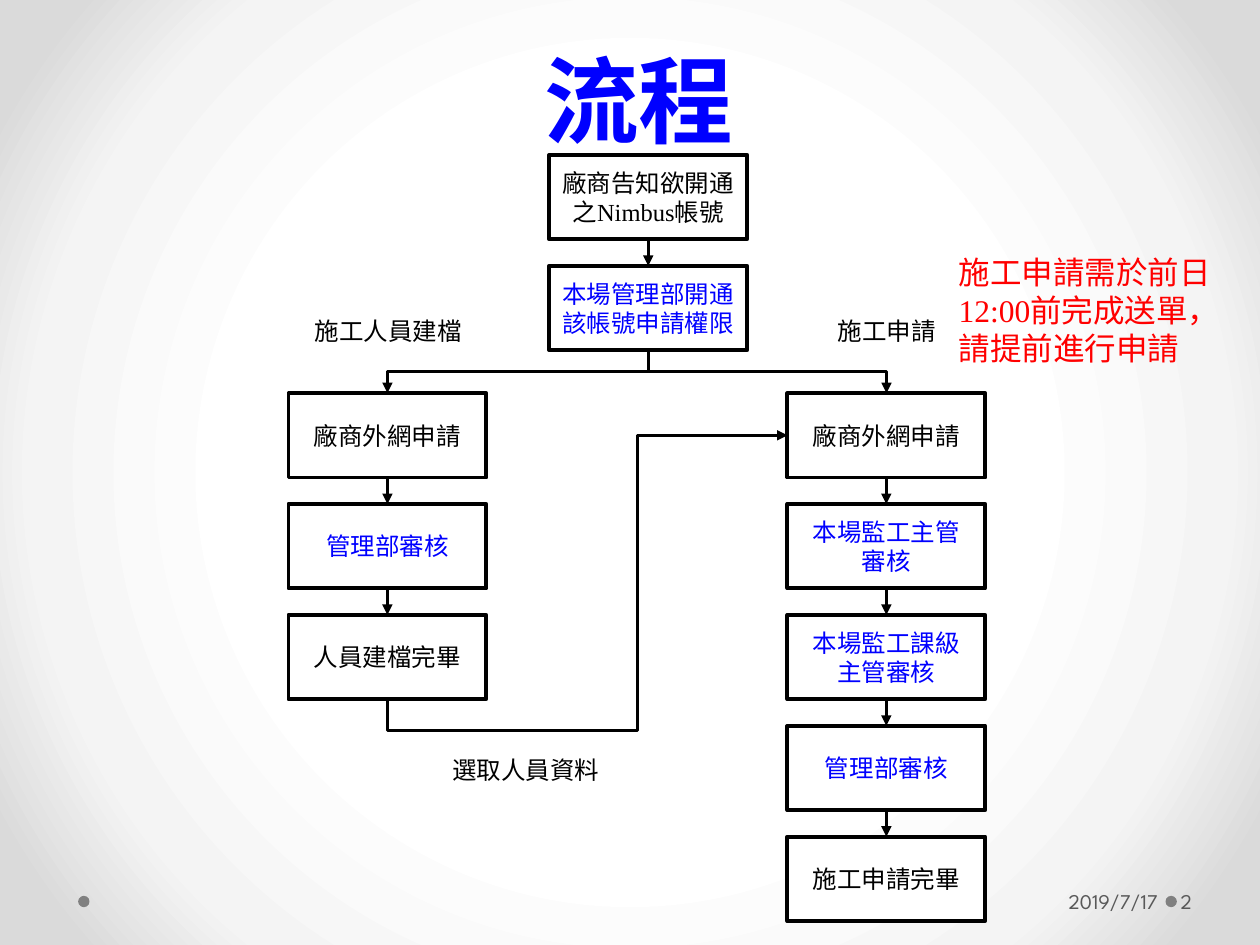
import pptx
import pptx.util
import pptx.oxml
import pptx.oxml.ns
from lxml import etree
from pptx.dml.color import RGBColor
from pptx.enum.shapes import MSO_CONNECTOR, MSO_SHAPE
from pptx.enum.text import MSO_ANCHOR, PP_ALIGN

Inches, Pt, qn = pptx.util.Inches, pptx.util.Pt, pptx.oxml.ns.qn

BLACK = RGBColor(0x00, 0x00, 0x00)
WHITE = RGBColor(0xFF, 0xFF, 0xFF)
BLUE = RGBColor(0x00, 0x00, 0xFF)
RED = RGBColor(0xFF, 0x00, 0x00)
GRAY = RGBColor(0x80, 0x80, 0x80)
DARK_GRAY = RGBColor(0x59, 0x59, 0x59)
SERIF, SANS, FOOTER = "Times New Roman", "Noto Sans CJK SC", "League Spartan"

# Content: each column is (left, top of first box, steps)
BOX_WIDTH, BOX_HEIGHT, ROW_PITCH = 1.57, 0.67, 0.88
COLUMNS = {
    "account": (4.36, 1.23, [("廠商告知欲開通之Nimbus帳號", BLACK),
                             ("本場管理部開通該帳號申請權限", BLUE)]),
    "staff": (2.29, 3.12, [("廠商外網申請", BLACK),
                           ("管理部審核", BLUE),
                           ("人員建檔完畢", BLACK)]),
    "work": (6.25, 3.12, [("廠商外網申請", BLACK),
                          ("本場監工主管\n審核", BLUE),
                          ("本場監工課級\n主管審核", BLUE),
                          ("管理部審核", BLUE),
                          ("施工申請完畢", BLACK)]),
}
LABELS = [("施工人員建檔", 2.4, 2.46, 1.38),
          ("施工申請", 6.55, 2.46, 0.99),
          ("選取人員資料", 3.49, 5.94, 1.38)]
NOTE = "施工申請需於前日12:00前完成送單，\n請提前進行申請"
GRADIENT = [(50, "FFFFFF"), (76, "F4F4F4"), (92, "DADADA")]

presentation = pptx.Presentation()
presentation.slide_width, presentation.slide_height = Inches(10), Inches(7.5)
slide = presentation.slides.add_slide(presentation.slide_layouts[6])


def write(shape, text, size, font, color, align=PP_ALIGN.LEFT,
          anchor=MSO_ANCHOR.TOP, bold=False, wrap=True):
    frame = shape.text_frame
    frame.text = text
    frame.word_wrap = wrap
    frame.vertical_anchor = anchor
    for paragraph in frame.paragraphs:
        paragraph.alignment = align
        paragraph.font.size = Pt(size)
        paragraph.font.name = font
        paragraph.font.bold = bold
        paragraph.font.color.rgb = color
        latin = paragraph.font._element.find(qn("a:latin"))
        east_asian = etree.Element(qn("a:ea"), typeface=SANS)
        latin.addnext(east_asian)
    return frame


def add_text(text, left, top, width, height, *style, **options):
    box = slide.shapes.add_textbox(*map(Inches, (left, top, width, height)))
    return write(box, text, *style, **options)


def add_box(kind, left, top, width, height, fill):
    shape = slide.shapes.add_shape(kind, *map(Inches, (left, top, width, height)))
    shape.shadow.inherit = False
    shape.fill.solid()
    shape.fill.fore_color.rgb = fill
    shape.line.fill.background()
    return shape


def add_arrow(kind, start, end):
    arrow = slide.shapes.add_connector(kind, *map(Inches, (*start, *end)))
    arrow.line.color.rgb = BLACK
    arrow.line.width = Pt(1.5)
    etree.SubElement(arrow.line._get_or_add_ln(), qn("a:tailEnd"), type="triangle")
    etree.SubElement(arrow._element.spPr, qn("a:effectLst"))
    return arrow


def add_elbow(start, end, bends=(50000,)):
    """Elbow that leaves vertically: a turned connector around the midpoint."""
    arrow = add_arrow(MSO_CONNECTOR.ELBOW, start, end)
    (x1, y1), (x2, y2) = start, end
    length, spread = abs(y2 - y1), abs(x2 - x1)
    arrow.left = Inches((x1 + x2 - length) / 2)
    arrow.top = Inches((y1 + y2 - spread) / 2)
    arrow.width, arrow.height = Inches(length), Inches(spread)
    right, up = x2 > x1, y2 < y1
    frame = arrow._element.spPr.find(qn("a:xfrm"))
    frame.set("rot", str((270 if right and not up else 90) * 60000))
    frame.set("flipH", str(int(right)))
    frame.set("flipV", str(int(right and up)))
    geometry = arrow._element.spPr.find(qn("a:prstGeom"))
    geometry.set("prst", f"bentConnector{len(bends) + 2}")
    guides = geometry.find(qn("a:avLst"))
    for number, bend in enumerate(bends, 1):
        etree.SubElement(guides, qn("a:gd"), name=f"adj{number}", fmla=f"val {bend}")


# Radial background
slide.background.fill.solid()
solid = slide.background._cSld.bg.bgPr.find(qn("a:solidFill"))
stops = "".join(f'<a:gs pos="{position * 1000}"><a:srgbClr val="{color}"/></a:gs>'
                for position, color in GRADIENT)
solid.getparent().replace(solid, pptx.oxml.parse_xml(
    f'<a:gradFill {pptx.oxml.ns.nsdecls("a")} rotWithShape="1"><a:gsLst>{stops}</a:gsLst>'
    '<a:path path="circle"><a:fillToRect l="50000" t="50000" r="50000" b="50000"/></a:path>'
    '</a:gradFill>'))

# Title and footer
title = add_text("流程", 0.57, 0.21, 9, 1.07, 54, SANS, BLUE,
                 align=PP_ALIGN.CENTER, anchor=MSO_ANCHOR.BOTTOM, bold=True)
title.paragraphs[0].line_spacing = Pt(58)
for left in (0.62, 9.25):
    add_box(MSO_SHAPE.OVAL, left, 7.11, 0.09, 0.09, GRAY)
number = add_text("2", 9.34, 6.95, 0.61, 0.4, 12, FOOTER, DARK_GRAY,
                  anchor=MSO_ANCHOR.MIDDLE)
number.margin_left = Inches(0.03)
date = add_text("2019/7/17", 6.96, 6.95, 2.28, 0.4, 12, FOOTER, DARK_GRAY,
                align=PP_ALIGN.RIGHT, anchor=MSO_ANCHOR.MIDDLE)
date.margin_right = Inches(0.05)

# Steps, with an arrow from each box to the next
for left, first_top, steps in COLUMNS.values():
    center = left + BOX_WIDTH / 2
    for row, (text, color) in enumerate(steps):
        top = first_top + row * ROW_PITCH
        step = add_box(MSO_SHAPE.RECTANGLE, left, top, BOX_WIDTH, BOX_HEIGHT, WHITE)
        step.line.color.rgb = BLACK
        step.line.width = Pt(2.25)
        write(step, text, 14, SERIF, color, PP_ALIGN.CENTER, MSO_ANCHOR.MIDDLE)
        if row:
            add_arrow(MSO_CONNECTOR.STRAIGHT,
                      (center, top - ROW_PITCH + BOX_HEIGHT), (center, top))


# Links between columns
def top_of(name):
    left, top, _ = COLUMNS[name]
    return left + BOX_WIDTH / 2, top


def bottom_of(name):
    left, top, steps = COLUMNS[name]
    return left + BOX_WIDTH / 2, top + (len(steps) - 1) * ROW_PITCH + BOX_HEIGHT


for branch in ("staff", "work"):
    add_elbow(bottom_of("account"), top_of(branch))
work_left, work_top, _ = COLUMNS["work"]
add_elbow(bottom_of("staff"), (work_left, work_top + BOX_HEIGHT / 2), (-11900, 62500))

# Labels and note
for text, left, top, width in LABELS:
    add_text(text, left, top, width, 0.34, 14, SANS, BLACK, wrap=False)
add_text(NOTE, 7.51, 1.96, 2.56, 1.01, 18, SERIF, RED)

presentation.save("out.pptx")
